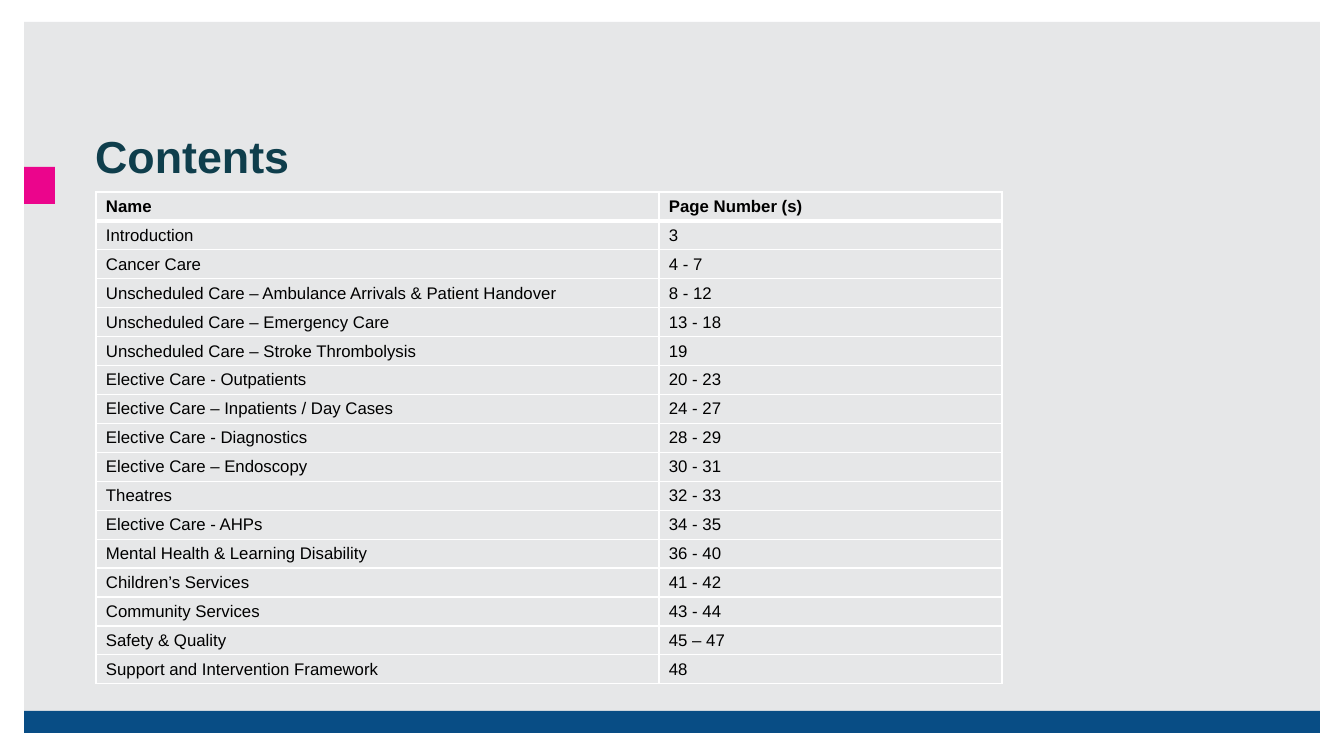
from lxml import etree
from pptx import Presentation
from pptx import util as u
from pptx.dml.color import RGBColor
from pptx.enum import shapes, text
from pptx.oxml import ns

EMU_PER_PX = 914400 / 100.8
GREY = RGBColor(0xE6, 0xE7, 0xE8)
BLUE = RGBColor(0x08, 0x4D, 0x85)
PINK = RGBColor(0xEB, 0x05, 0x8C)
TEAL = RGBColor(0x0F, 0x3E, 0x4C)
BLACK = RGBColor(0, 0, 0)
WHITE = RGBColor(0xFF, 0xFF, 0xFF)

CONTENTS = [
    ("Name", "Page Number (s)"),
    ("Introduction", "3"),
    ("Cancer Care", "4 - 7"),
    ("Unscheduled Care – Ambulance Arrivals & Patient Handover", "8 - 12"),
    ("Unscheduled Care – Emergency Care", "13 - 18"),
    ("Unscheduled Care – Stroke Thrombolysis", "19"),
    ("Elective Care - Outpatients", "20 - 23"),
    ("Elective Care – Inpatients / Day Cases", "24 - 27"),
    ("Elective Care - Diagnostics", "28 - 29"),
    ("Elective Care – Endoscopy", "30 - 31"),
    ("Theatres", "32 - 33"),
    ("Elective Care - AHPs", "34 - 35"),
    ("Mental Health & Learning Disability", "36 - 40"),
    ("Children’s Services", "41 - 42"),
    ("Community Services", "43 - 44"),
    ("Safety & Quality", "45 – 47"),
    ("Support and Intervention Framework", "48"),
]


def px(n):
    return u.Emu(round(n * EMU_PER_PX))


def add_block(s, x, y, w, h, color):
    sp = s.shapes.add_shape(shapes.MSO_SHAPE.RECTANGLE, px(x), px(y), px(w), px(h))
    sp.shadow.inherit = False
    sp.fill.solid()
    sp.fill.fore_color.rgb = color
    sp.line.fill.background()


def add_backdrop(s, x, y, w, h):
    """Grey panel with a blue footer band and a pink tab on its left edge."""
    footer_h = 22
    add_block(s, x, y, w, h, GREY)
    add_block(s, x, y + h - footer_h, w, footer_h, BLUE)
    add_block(s, x, y + 145, 31, 37, PINK)


def place_title(s, x, y, w, h, wording):
    sp = s.shapes.title
    s.shapes._spTree.append(sp._element)  # bring in front of the backdrop
    sp.left, sp.top, sp.width, sp.height = px(x), px(y), px(w), px(h)
    tf = sp.text_frame
    tf.text = wording
    tf.auto_size = text.MSO_AUTO_SIZE.NONE
    tf.vertical_anchor = text.MSO_ANCHOR.TOP
    p = tf.paragraphs[0]
    p.alignment = text.PP_ALIGN.LEFT
    p.line_spacing = 0.9
    p.font.name, p.font.size, p.font.bold = "Arial", u.Pt(32), True
    p.font.color.rgb = TEAL


def set_borders(cell, widths):
    """Draw white borders; widths are points for left, right, top, bottom."""
    tc_pr = cell._tc.get_or_add_tcPr()
    for i, (side, width) in enumerate(zip("LRTB", widths)):
        ln = etree.Element(ns.qn(f"a:ln{side}"), w=str(u.Pt(width)))
        fill = etree.SubElement(ln, ns.qn("a:solidFill"))
        etree.SubElement(fill, ns.qn("a:srgbClr"), val=str(WHITE))
        tc_pr.insert(i, ln)


def fill_cell(cell, wording, row):
    cell.text = wording
    cell.margin_left = cell.margin_right = px(10)
    cell.margin_top = cell.margin_bottom = px(4)
    cell.vertical_anchor = text.MSO_ANCHOR.MIDDLE
    cell.fill.background()
    # The rule under the header row is thicker
    set_borders(cell, (1, 1, 3 if row == 1 else 1, 3 if row == 0 else 1))
    p = cell.text_frame.paragraphs[0]
    p.font.name, p.font.size, p.font.bold = "Arial", u.Pt(12), row == 0
    p.font.color.rgb = BLACK


def add_contents_table(s, x, y, w, h):
    frame = s.shapes.add_table(len(CONTENTS), 2, px(x), px(y), px(w), px(h))
    table = frame.table
    table.first_row = table.horz_banding = False
    name_w = 563
    for column, width in zip(table.columns, (name_w, w - name_w)):
        column.width = px(width)
    for i, entry in enumerate(CONTENTS):
        table.rows[i].height = px(h / len(CONTENTS))
        for j, wording in enumerate(entry):
            fill_cell(table.cell(i, j), wording, i)


def build_contents_slide(prs):
    s = prs.slides.add_slide(prs.slide_layouts[5])
    add_backdrop(s, 24, 22, 1296, 711)
    place_title(s, 85, 130, 906, 61, "Contents")
    add_contents_table(s, 96, 192, 906, 492)


def main():
    prs = Presentation()
    prs.slide_width, prs.slide_height = px(1344), px(756)
    build_contents_slide(prs)
    prs.save("out.pptx")


if __name__ == "__main__":
    main()
